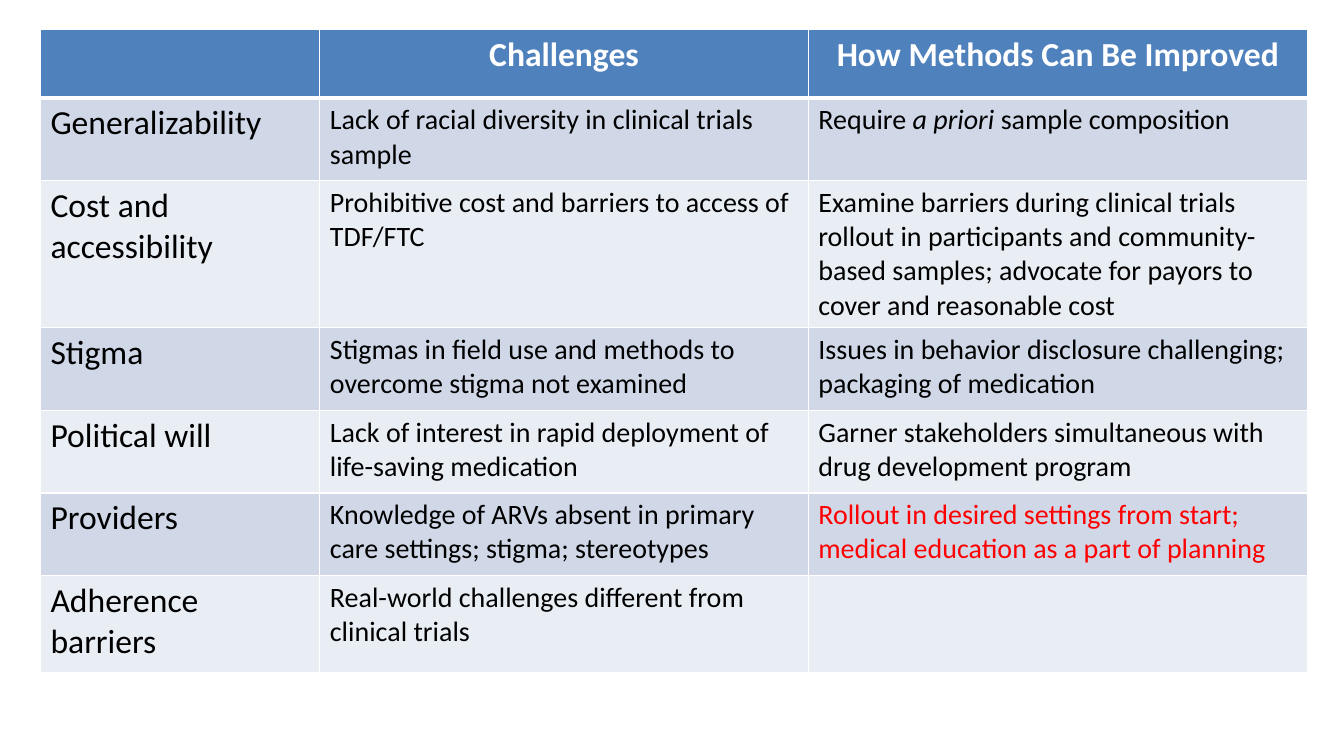
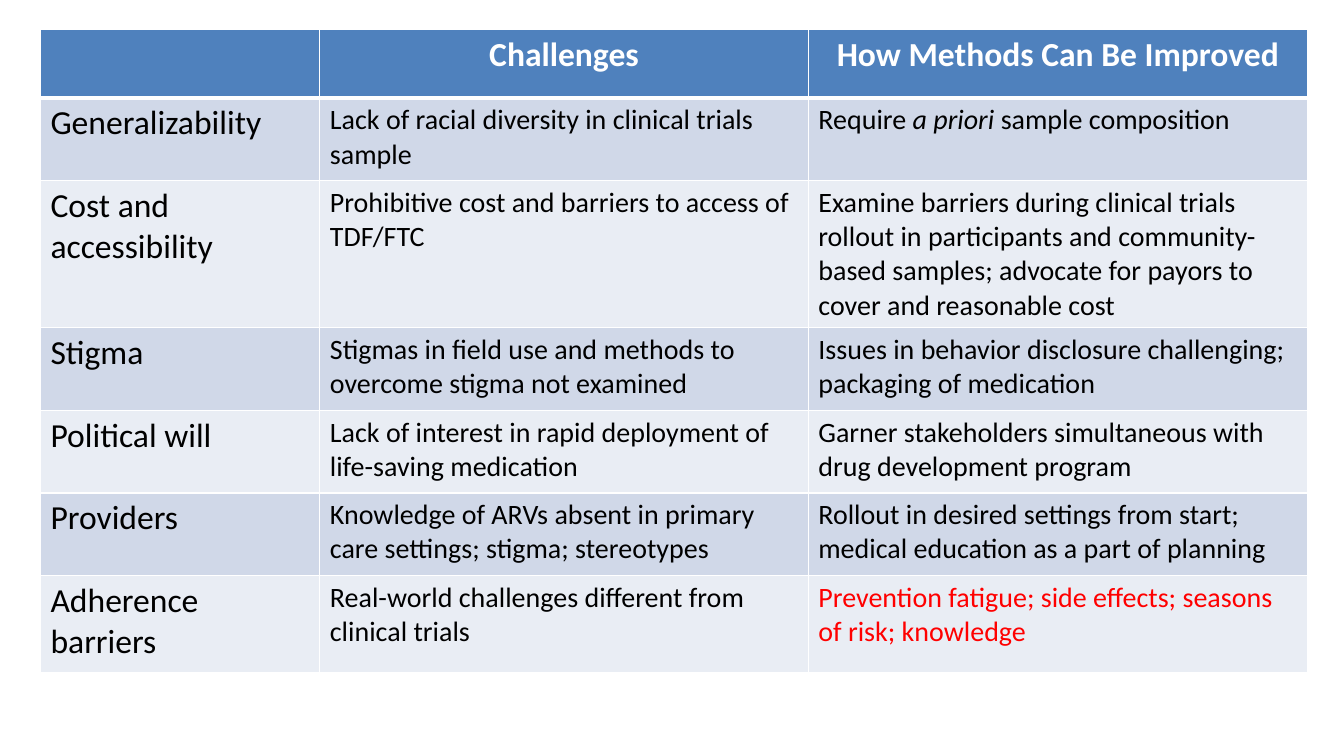
from dataclasses import dataclass

from lxml.etree import SubElement
from pptx import Presentation
from pptx.dml.color import RGBColor
from pptx.enum.text import PP_ALIGN
from pptx.oxml.ns import qn
from pptx.util import Cm, Pt


@dataclass(frozen=True)
class Theme:
    font: str = "Calibri"
    large: int = 24
    small: int = 20
    white: str = "FFFFFF"
    black: str = "000000"
    red: str = "FF0000"
    head: str = "4F81BD"
    bands: tuple = ("E9EDF4", "D0D8E8")
    thin: int = 1
    thick: int = 3


THEME = Theme()
BOX = (1.02, 0.74, 31.93, 16.13)
COLS = (7.04, 12.31, 12.58)
ROWS = (1.73, 2.08, 3, 2.08, 2.08, 2.08, 2.44)

HEADS = ("", "Challenges", "How Methods Can Be Improved")
# Topic, challenge and remedy; asterisks enclose italics
ITEMS = (
    ("Generalizability",
     "Lack of racial diversity in clinical trials sample",
     "Require *a priori *sample composition"),
    ("Cost and accessibility",
     "Prohibitive cost and barriers to access of TDF/FTC",
     "Examine barriers during clinical trials rollout in participants and "
     "community-based samples; advocate for payors to cover and reasonable cost"),
    ("Stigma",
     "Stigmas in field use and methods to overcome stigma not examined",
     "Issues in behavior disclosure challenging; packaging of medication"),
    ("Political will",
     "Lack of interest in rapid deployment of life-saving medication",
     "Garner stakeholders simultaneous with drug development program"),
    ("Providers",
     "Knowledge of ARVs absent in primary care settings; stigma; stereotypes",
     "Rollout in desired settings from start; medical education as a part of planning"),
    ("Adherence barriers",
     "Real-world challenges different from clinical trials",
     "Prevention fatigue; side effects; seasons of risk; knowledge"),
)


def add_edges(cell, row):
    """Draw white cell borders, with a thick rule below the header."""
    props = cell._tc.get_or_add_tcPr()
    for side in "LRTB":
        thick = (row, side) in ((0, "B"), (1, "T"))
        width = Pt(THEME.thick if thick else THEME.thin)
        line = SubElement(props, qn(f"a:ln{side}"), w=str(width))
        fill = SubElement(line, qn("a:solidFill"))
        SubElement(fill, qn("a:srgbClr"), val=THEME.white)


def fill_cell(cell, row, text, size, color):
    head = row == 0
    add_edges(cell, row)
    cell.fill.solid()
    shade = THEME.head if head else THEME.bands[row % 2]
    cell.fill.fore_color.rgb = RGBColor.from_string(shade)

    para = cell.text_frame.paragraphs[0]
    para.alignment = PP_ALIGN.CENTER if head else PP_ALIGN.LEFT
    font = para.font
    font.name, font.size, font.bold = THEME.font, Pt(size), head
    font.color.rgb = RGBColor.from_string(color)
    if text:
        for i, part in enumerate(text.split("*")):
            run = para.add_run()
            run.text = part
            if i % 2:
                run.font.italic = True


def add_grid(slide, box, shown):
    """Show the first remedies, the newest of them in red."""
    frame = slide.shapes.add_table(len(ROWS), len(COLS), *map(Cm, box))
    table = frame.table
    for col, width in zip(table.columns, COLS):
        col.width = Cm(width)
    for row, height in zip(table.rows, ROWS):
        row.height = Cm(height)

    # Header
    for c, text in enumerate(HEADS):
        fill_cell(table.cell(0, c), 0, text, THEME.large, THEME.white)

    # Topics
    for r, (topic, issue, remedy) in enumerate(ITEMS, 1):
        fill_cell(table.cell(r, 0), r, topic, THEME.large, THEME.black)
        fill_cell(table.cell(r, 1), r, issue, THEME.small, THEME.black)
        text = remedy if r <= shown else ""
        color = THEME.red if r == shown else THEME.black
        fill_cell(table.cell(r, 2), r, text, THEME.small, color)


def main():
    deck = Presentation()
    deck.slide_width, deck.slide_height = Cm(33.87), Cm(19.05)
    for shown in (5, 6):
        slide = deck.slides.add_slide(deck.slide_layouts[6])
        add_grid(slide, BOX, shown)
    deck.save("out.pptx")


if __name__ == "__main__":
    main()
